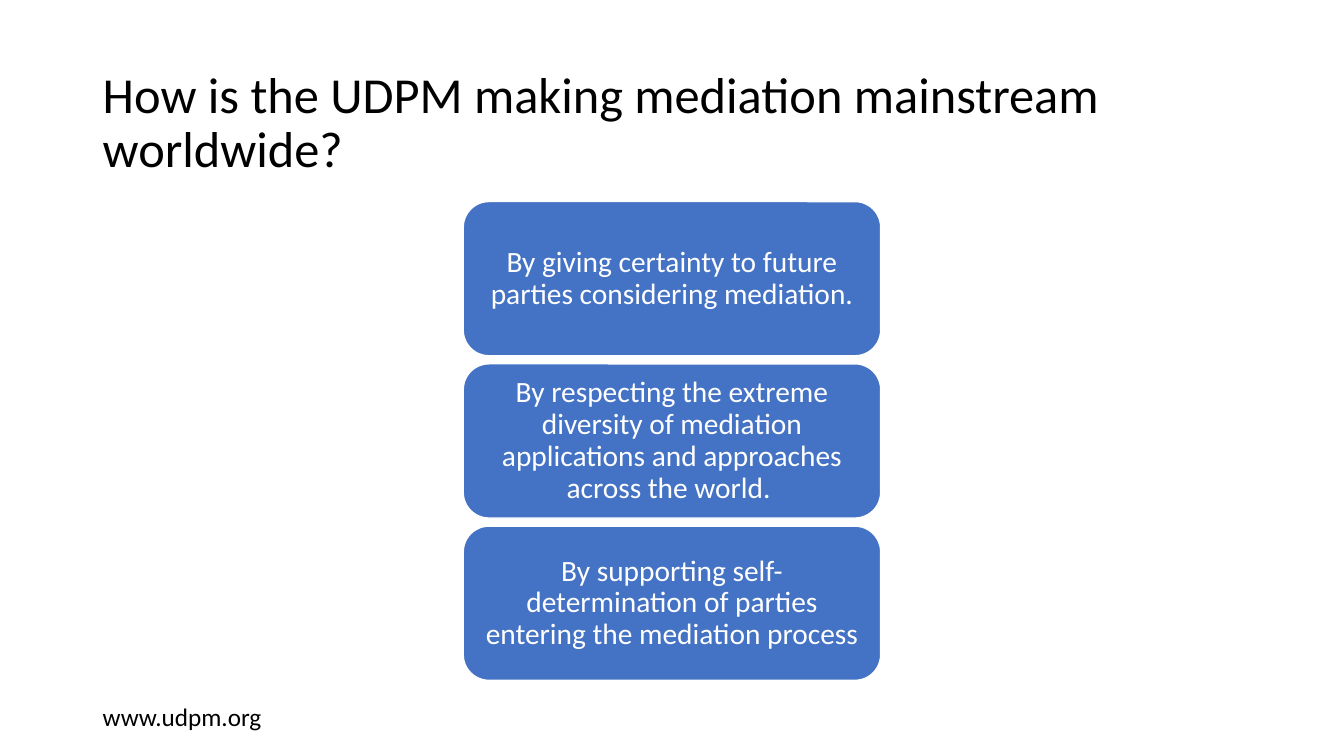
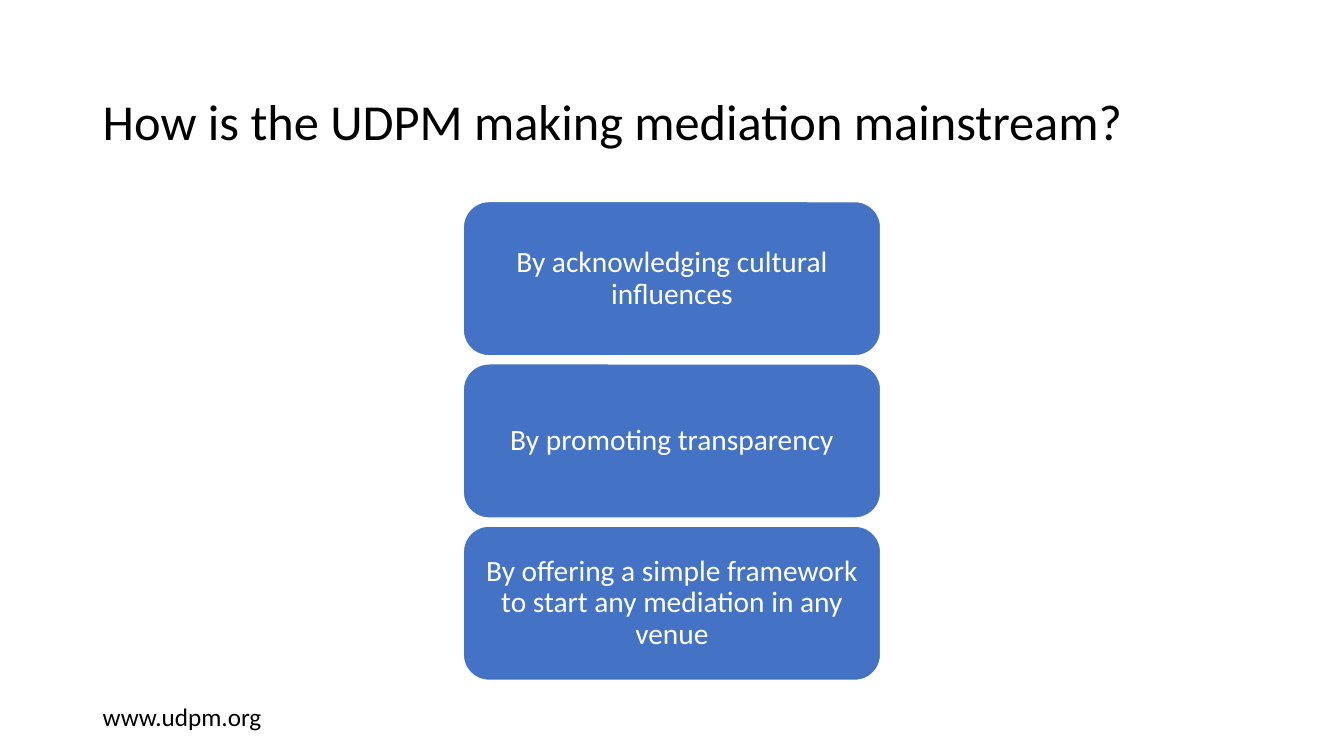
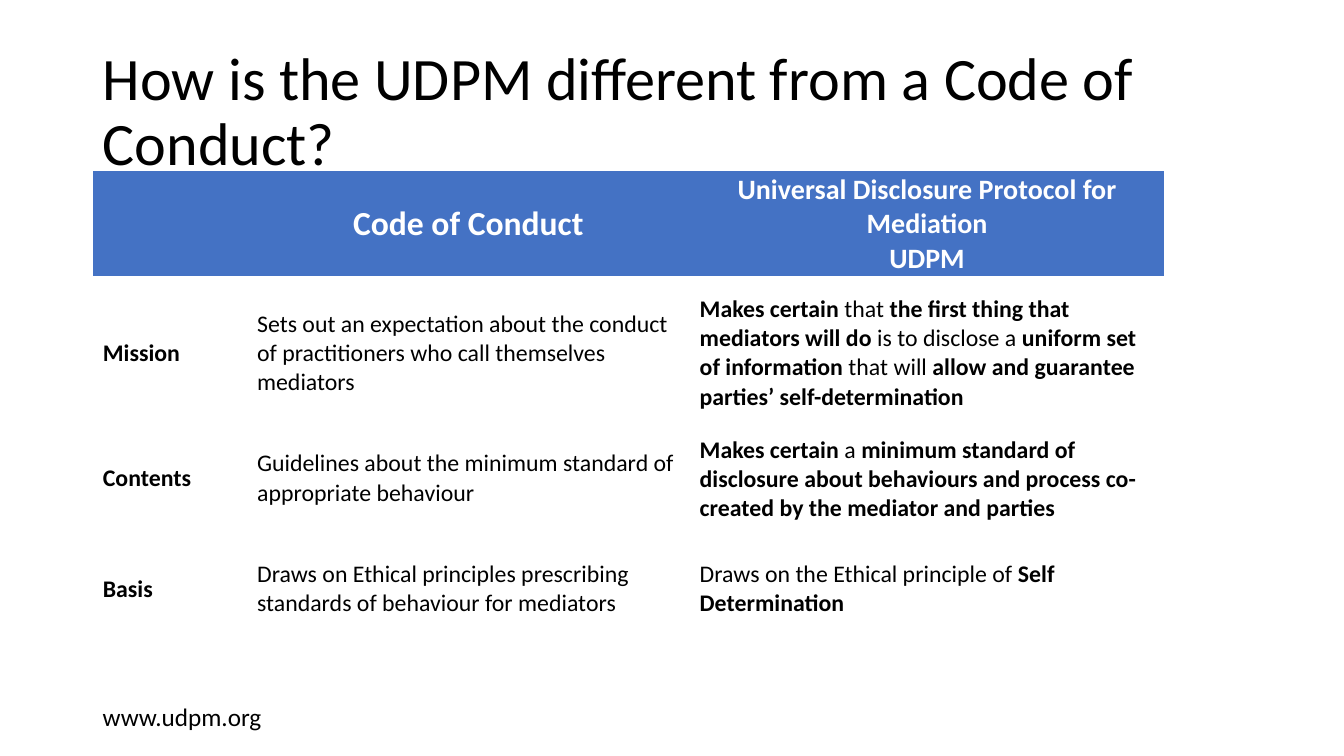
"""Build three slides on how the UDPM brings mediation into the mainstream."""
from dataclasses import dataclass

from pptx import Presentation, util as u
from pptx.dml.color import RGBColor
from pptx.enum import shapes, text

WIDE, HIGH = 13.33, 7.5
LEFT = 0.92
BLUE, WHITE, BLACK = "4472C4", "FFFFFF", "000000"
FONT = "Calibri"
MID, START = text.PP_ALIGN.CENTER, text.PP_ALIGN.LEFT
BOX_W, BOX_H, BOX_TOP, STEP = 4.14, 1.53, 2.0, 1.61
COLS = (1.53, 4.39, 4.71)
ROWS = (1.04, 1.53, 0.95, 1.25)


@dataclass(frozen=True)
class Look:
    """Text style: size, colour, alignment, line spacing and margins."""

    size: float
    color: str = BLACK
    align: text.PP_ALIGN = START
    space: float = 1.0
    pad: tuple[float, float, float, float] = (0.1, 0.05, 0.1, 0.05)


@dataclass(frozen=True)
class Area:
    """Place of an element in inches."""

    left: float
    top: float
    width: float
    height: float

    def lengths(self) -> list[u.Length]:
        """Return the place as lengths."""
        return [u.Inches(n) for n in (self.left, self.top, self.width, self.height)]


@dataclass(frozen=True)
class Stack:
    """A slide with a title above a column of boxes."""

    title: str
    points: tuple[str, ...]


HEAD_PAD = (0.01, 0.01, 0.01, 0)
BODY = Look(17)
BOX = Look(21, WHITE, MID, 0.9, (0.09, 0.04, 0.09, 0.04))
HEADS = (Look(24, WHITE, MID, pad=HEAD_PAD),) * 2 + (Look(20, WHITE, MID, pad=HEAD_PAD),)

STACKS = (
    Stack("How is the UDPM making mediation mainstream worldwide?", (
        "By giving certainty to future parties considering mediation.",
        "By respecting the extreme diversity of mediation applications "
        "and approaches across the world. ",
        "By supporting self-determination of parties entering the mediation process",
    )),
    Stack("How is the UDPM making mediation mainstream?", (
        "By acknowledging cultural influences",
        "By promoting transparency",
        "By offering a simple framework to start any mediation in any venue",
    )),
)

CELLS = (
    ("", "*Code of Conduct*", "*Universal Disclosure Protocol for Mediation*\n*UDPM*"),
    ("*Mission*",
     "Sets out an expectation about the conduct of practitioners who call themselves mediators",
     "*Makes certain *that *the first thing that mediators will do *is to disclose a "
     "*uniform set of information *that will *allow and guarantee parties’ self-determination*"),
    ("*Contents*",
     "Guidelines about the minimum standard of appropriate behaviour",
     "*Makes certain *a *minimum standard of disclosure about behaviours and process "
     "co-created by the mediator and parties*"),
    ("*Basis*",
     "Draws on Ethical principles prescribing standards of behaviour for mediators",
     "Draws on the Ethical principle of *Self Determination*"),
)


def tint(value: str) -> RGBColor:
    """Turn a hex string into a colour."""
    return RGBColor.from_string(value)


def write(frame, words: str, look: Look) -> None:
    """Fill a frame with lines of text, bold between asterisks."""
    frame.text = words
    for para in frame.paragraphs:
        parts = para.text.split("*")
        para.text = ""
        para.alignment, para.line_spacing = look.align, look.space
        for rank, part in enumerate(parts):
            if part:
                run = para.add_run()
                run.text = part
                font = run.font
                font.name, font.size = FONT, u.Pt(look.size)
                font.bold = rank % 2 == 1
                font.color.rgb = tint(look.color)


def inset(item, look: Look) -> None:
    """Set the margins of a cell or a text frame."""
    item.margin_left, item.margin_top, item.margin_right, item.margin_bottom = (
        u.Inches(n) for n in look.pad)
    item.vertical_anchor = text.MSO_ANCHOR.MIDDLE


def label(slide, area: Area, words: str, look: Look, wrap: bool = True) -> None:
    """Add a plain text box."""
    frame = slide.shapes.add_textbox(*area.lengths()).text_frame
    inset(frame, look)
    frame.word_wrap = wrap
    write(frame, words, look)


def start(deck, title: str, size: float = 36, top: float = 0.61):
    """Add a blank slide with its title and web address."""
    slide = deck.slides.add_slide(deck.slide_layouts[6])
    label(slide, Area(LEFT, top, WIDE - 2 * LEFT, 1.85 - top), title, Look(size, space=0.9))
    label(slide, Area(LEFT, 6.91, 1.79, 0.4), "www.udpm.org", Look(18), wrap=False)
    return slide


def pile(slide, points: tuple[str, ...]) -> None:
    """Draw a centred column of rounded boxes."""
    for rank, point in enumerate(points):
        area = Area((WIDE - BOX_W) / 2, BOX_TOP + rank * STEP, BOX_W, BOX_H)
        box = slide.shapes.add_shape(shapes.MSO_SHAPE.ROUNDED_RECTANGLE, *area.lengths())
        box.shadow.inherit = False
        box.fill.solid()
        box.fill.fore_color.rgb = tint(BLUE)
        box.line.color.rgb = tint(WHITE)
        box.line.width = u.Pt(1)
        inset(box.text_frame, BOX)
        box.text_frame.word_wrap = True
        write(box.text_frame, point, BOX)


def grid(slide) -> None:
    """Draw the comparison table."""
    area = Area(LEFT, 1.7, sum(COLS), sum(ROWS))
    table = slide.shapes.add_table(len(ROWS), len(COLS), *area.lengths()).table
    table.horz_banding = False
    for col, width in zip(table.columns, COLS):
        col.width = u.Inches(width)
    for rank, (row, height, line) in enumerate(zip(table.rows, ROWS, CELLS)):
        row.height = u.Inches(height)
        for cell, words, head in zip(row.cells, line, HEADS):
            look = BODY if rank else head
            inset(cell, look)
            write(cell.text_frame, words, look)
            if rank:
                cell.fill.background()
            else:
                cell.fill.solid()
                cell.fill.fore_color.rgb = tint(BLUE)
    props = table._tbl.tblPr
    for style in list(props):
        style.text = "{2D5ABB26-0587-4C30-8999-92F81FD0307C}"


def main() -> None:
    """Build and save the slides."""
    deck = Presentation()
    deck.slide_width, deck.slide_height = u.Inches(WIDE), u.Inches(HIGH)
    for stack in STACKS:
        pile(start(deck, stack.title), stack.points)
    grid(start(deck, "How is the UDPM different from a Code of Conduct?", 43, 0.4))
    deck.save("out.pptx")


if __name__ == "__main__":
    main()
